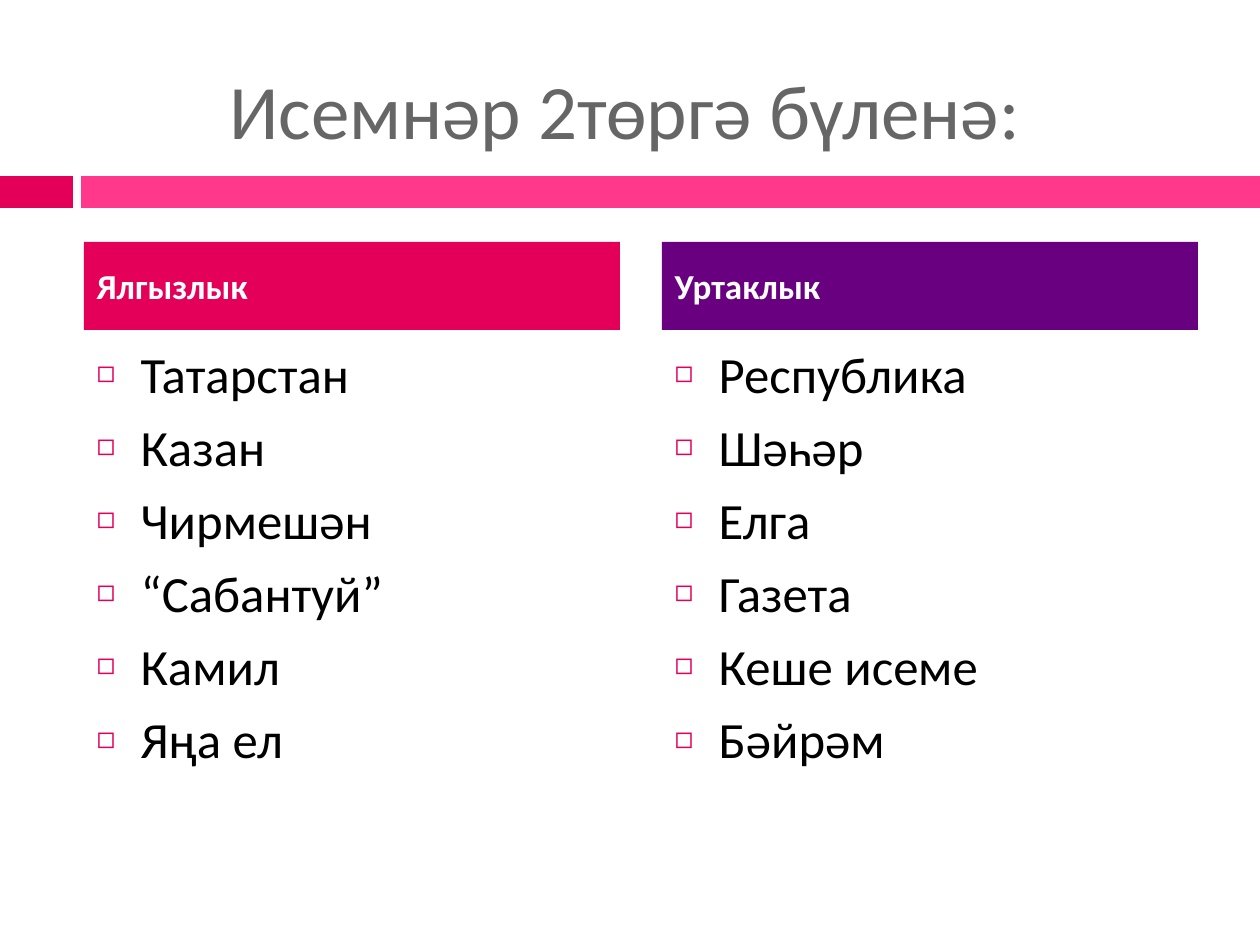
from dataclasses import dataclass

from lxml.etree import SubElement
from pptx import Presentation
from pptx.dml.color import RGBColor
from pptx.enum.shapes import MSO_SHAPE
from pptx.enum.text import MSO_ANCHOR, MSO_AUTO_SIZE, PP_ALIGN
from pptx.oxml.ns import qn
from pptx.util import Pt

EMU_PER_PX = 914400 / 126


@dataclass(frozen=True)
class Theme:
    font: str = "Calibri"
    title_size: int = 44
    heading_size: int = 20
    list_size: int = 29
    list_gap: int = 7
    bullet_percent: int = 60
    title: str = "666666"
    text: str = "000000"
    heading_text: str = "FFFFFF"
    crimson: str = "E40059"
    pink: str = "FF388C"
    purple: str = "68007F"


THEME = Theme()

SLIDE_WIDTH, SLIDE_HEIGHT = 1260, 945
BAR_TOP, BAR_HEIGHT = 176, 32
COLUMN_LEFT, COLUMN_WIDTH, COLUMN_STEP = 84, 536, 578
HEADING_TOP, HEADING_HEIGHT = 242, 88
LIST_TOP, LIST_HEIGHT = 336, 494
LIST_INDENT = 44
TITLE_INDENT = 139

TITLE = "Исемнәр 2төргә бүленә:"
# heading, heading colour, words, heading placeholder, list placeholder
COLUMNS = [
    ("Ялгызлык", THEME.crimson,
     ["Татарстан", "Казан", "Чирмешән", "“Сабантуй”", "Камил", "Яңа ел"], 1, 2),
    ("Уртаклык", THEME.purple,
     ["Республика", "Шәһәр", "Елга", "Газета", "Кеше исеме", "Бәйрәм"], 3, 4),
]


def px(length):
    return round(length * EMU_PER_PX)


def place(shape, left, top, width, height):
    shape.left, shape.top = px(left), px(top)
    shape.width, shape.height = px(width), px(height)


def fill(shape, color):
    shape.fill.solid()
    shape.fill.fore_color.rgb = RGBColor.from_string(color)


def write(shape, lines, size, color, anchor, bold=False):
    """Put one paragraph per line into a placeholder and format its runs."""
    frame = shape.text_frame
    frame.text = "\n".join(lines)
    frame.word_wrap = True
    frame.auto_size = MSO_AUTO_SIZE.NONE
    frame.vertical_anchor = anchor
    for number, paragraph in enumerate(frame.paragraphs):
        paragraph.alignment = PP_ALIGN.LEFT
        paragraph.space_before = Pt(THEME.list_gap if number else 0)
        for run in paragraph.runs:
            run.font.name = THEME.font
            run.font.size = Pt(size)
            run.font.bold = bold
            run.font.color.rgb = RGBColor.from_string(color)


def add_bullet(paragraph):
    properties = paragraph._p.get_or_add_pPr()
    properties.set("marL", str(px(LIST_INDENT)))
    properties.set("indent", str(-px(LIST_INDENT)))
    bullet_color = SubElement(properties, qn("a:buClr"))
    SubElement(bullet_color, qn("a:srgbClr"), val=THEME.crimson)
    SubElement(properties, qn("a:buSzPct"), val=str(THEME.bullet_percent * 1000))
    SubElement(properties, qn("a:buChar"), char="◻")


def add_bar(slide, left, width, color):
    bar = slide.shapes.add_shape(
        MSO_SHAPE.RECTANGLE, px(left), px(BAR_TOP), px(width), px(BAR_HEIGHT))
    fill(bar, color)
    bar.line.fill.background()
    bar.shadow.inherit = False


def set_title(slide):
    title = slide.shapes.title
    place(title, 78, 49, 1124, 120)
    write(title, [TITLE], THEME.title_size, THEME.title, MSO_ANCHOR.MIDDLE)
    properties = title.text_frame.paragraphs[0]._p.get_or_add_pPr()
    properties.set("marL", str(px(TITLE_INDENT)))


def set_heading(heading, text, left, color):
    place(heading, left, HEADING_TOP, COLUMN_WIDTH, HEADING_HEIGHT)
    fill(heading, color)
    write(heading, [text], THEME.heading_size, THEME.heading_text,
          MSO_ANCHOR.MIDDLE, bold=True)


def set_word_list(word_list, words, left):
    place(word_list, left, LIST_TOP, COLUMN_WIDTH, LIST_HEIGHT)
    write(word_list, words, THEME.list_size, THEME.text, MSO_ANCHOR.TOP)
    for paragraph in word_list.text_frame.paragraphs:
        add_bullet(paragraph)


def main():
    presentation = Presentation()
    presentation.slide_width = px(SLIDE_WIDTH)
    presentation.slide_height = px(SLIDE_HEIGHT)
    comparison = presentation.slide_layouts.get_by_name("Comparison")
    slide = presentation.slides.add_slide(comparison)

    add_bar(slide, 0, 73, THEME.crimson)
    add_bar(slide, 81, SLIDE_WIDTH - 81, THEME.pink)
    set_title(slide)

    placeholders = {p.placeholder_format.idx: p for p in slide.placeholders}
    for number, (heading, color, words, heading_id, list_id) in enumerate(COLUMNS):
        left = COLUMN_LEFT + number * COLUMN_STEP
        set_heading(placeholders[heading_id], heading, left, color)
        set_word_list(placeholders[list_id], words, left)

    presentation.save("out.pptx")


if __name__ == "__main__":
    main()
